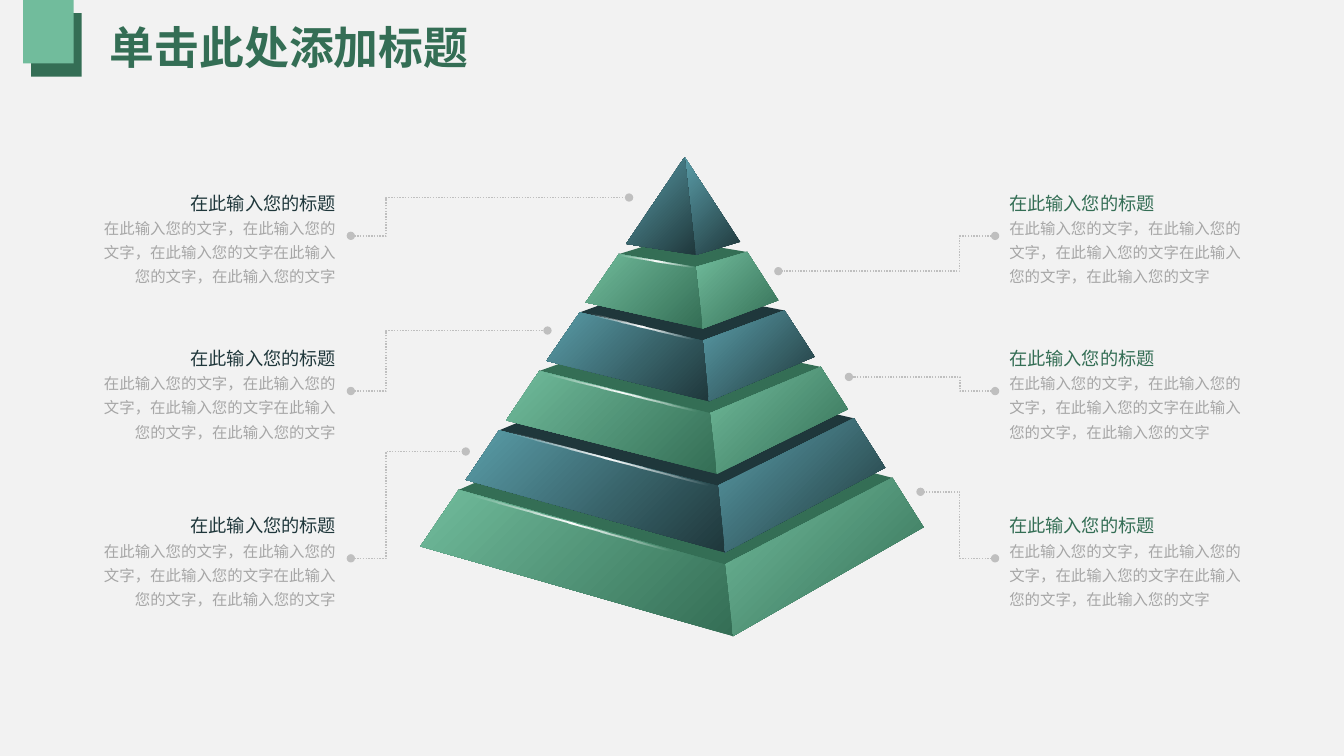
from lxml import etree
from pptx import Presentation
from pptx import util as u
from pptx.dml.color import RGBColor
from pptx.enum import dml, shapes, text
from pptx.oxml.ns import qn

FONT = "Noto Sans CJK SC"
GREEN, MINT, NAVY, TEAL = "346E55", "71BC9C", "1F373B", "5A9DA8"
HEADING = "在此输入您的标题"
BODY = "在此输入您的文字，在此输入您的文字，在此输入您的文字在此输入您的文字，在此输入您的文字"

# Corners: back, left top, left bottom, front bottom, right bottom, right top, front top
TIERS = [
    (GREEN, MINT, [(2.13, 2.53), (0.38, 3.3), (0, 3.86), (3.1, 4.75), (4.99, 3.67), (4.68, 3.18), (3.02, 4.04)],
     (0.47, 3.62, 2.06, 15.5)),
    (NAVY, TEAL, [(2.22, 2.11), (0.78, 2.71), (0.45, 3.2), (3.02, 3.92), (4.61, 3.08), (4.3, 2.59), (2.95, 3.26)],
     (0.83, 2.98, 2.06, 14.4)),
    (GREEN, MINT, [(2.27, 1.73), (1.18, 2.12), (0.85, 2.61), (2.94, 3.14), (4.24, 2.5), (3.97, 2.08), (2.87, 2.54)],
     (1.24, 2.32, 1.52, 13.7)),
    (NAVY, TEAL, [(2.32, 1.27), (1.58, 1.54), (1.25, 2.02), (2.86, 2.42), (3.91, 1.98), (3.61, 1.52), (2.8, 1.82)],
     (1.67, 1.67, 1.05, 12.8)),
    (GREEN, MINT, [(2.46, 0.81), (1.97, 0.96), (1.64, 1.44), (2.8, 1.7), (3.55, 1.42), (3.24, 0.94), (2.73, 1.09)],
     (1.98, 1.02, 0.73, 9)),
]
PEAK = [(2.62, 0), (2.04, 0.86), (2.73, 0.97), (3.17, 0.84)]

ROW_TOPS = [1.77, 3.31, 4.97]
LEFT_TARGETS = [(6.24, 1.96), (5.43, 3.28), (4.62, 4.48)]
RIGHT_TARGETS = [(7.72, 2.69), (8.42, 3.74), (9.13, 4.88)]


def rgb(hex_colour):
    """Turn a hex string into a colour."""
    return RGBColor.from_string(hex_colour)


def paint(part, *colours):
    """Fill with one colour, or with a diagonal gradient of two; no line or shadow."""
    part.shadow.inherit = False
    part.line.fill.background()
    if len(colours) == 1:
        part.fill.solid()
        part.fill.fore_color.rgb = rgb(colours[0])
        return
    part.fill.gradient()
    part.fill.gradient_angle = 135
    for stop, colour in zip(part.fill.gradient_stops, colours):
        stop.color.rgb = rgb(colour)


def style(paragraph, size, colour, spacing, bold=False):
    """Format a paragraph and its run."""
    paragraph.line_spacing = spacing
    font = paragraph.runs[0].font
    font.size, font.bold, font.name = u.Pt(size), bold, FONT
    font.color.rgb = rgb(colour)
    etree.SubElement(paragraph.runs[0].font._element, qn("a:ea")).set("typeface", FONT)


def add_header(slide, left, top):
    """Place the two overlapping blocks and the slide title."""
    for dx, dy, colour in [(0.08, 0.13, GREEN), (0, 0, MINT)]:
        block = slide.shapes.add_shape(shapes.MSO_SHAPE.RECTANGLE, u.Inches(left + dx),
                                       u.Inches(top + dy), u.Inches(0.5), u.Inches(0.63))
        paint(block, colour)
    title = slide.shapes.add_textbox(u.Inches(left + 0.76), u.Inches(top + 0.13),
                                     u.Inches(11.5), u.Inches(0.73))
    frame = title.text_frame
    frame.word_wrap = True
    frame.vertical_anchor = text.MSO_ANCHOR.MIDDLE
    frame.text = "单击此处添加标题"
    style(frame.paragraphs[0], 32, GREEN, 0.9, True)


def add_face(slide, left, top, corners, *colours):
    """Draw one flat face of the pyramid."""
    points = [(u.Inches(left + x), u.Inches(top + y)) for x, y in corners]
    builder = slide.shapes.build_freeform(*points[0])
    builder.add_line_segments(points[1:], close=True)
    paint(builder.convert_to_shape(), *colours)


def add_shine(slide, left, top, width, angle):
    """Draw a white glint that fades towards its ends."""
    shine = slide.shapes.add_shape(shapes.MSO_SHAPE.ROUNDED_RECTANGLE, u.Inches(left),
                                   u.Inches(top), u.Inches(width), u.Inches(0.02))
    shine.adjustments[0] = 0.5
    shine.rotation = angle
    paint(shine, "FFFFFF", "FFFFFF")
    gradient = shine._element.spPr.find(qn("a:gradFill"))
    outer_colour = gradient.findall(".//" + qn("a:srgbClr"))[1]
    etree.SubElement(outer_colour, qn("a:alpha")).set("val", "0")
    circle = etree.Element(qn("a:path"), {"path": "circle"})
    etree.SubElement(circle, qn("a:fillToRect"), {side: "50000" for side in "ltrb"})
    gradient.replace(gradient.find(qn("a:lin")), circle)


def add_pyramid(slide, left, top):
    """Stack the tiers from the base up and finish with the peak."""
    for dark, light, corners, (x, y, width, angle) in TIERS:
        _, left_top, left_bottom, front_bottom, right_bottom, right_top, front_top = corners
        add_face(slide, left, top, corners[:6], dark)
        add_face(slide, left, top, [right_top, front_top, front_bottom, right_bottom], dark, light)
        add_face(slide, left, top, [front_top, left_top, left_bottom, front_bottom], dark, light)
        add_shine(slide, left + x, top + y, width, angle)
    apex, left_corner, front_corner, right_corner = PEAK
    add_face(slide, left, top, [apex, front_corner, right_corner], NAVY, TEAL)
    add_face(slide, left, top, [apex, left_corner, front_corner], NAVY, TEAL)


def add_leader(slide, start, end, bend):
    """Draw a dotted elbow line whose bend lies a given way from its start."""
    leader = slide.shapes.add_connector(shapes.MSO_CONNECTOR.ELBOW,
                                        *(u.Inches(value) for value in (*start, *end)))
    leader.line.color.rgb = rgb("BFBFBF")
    leader.line.width = u.Pt(1)
    leader.line.dash_style = dml.MSO_LINE.ROUND_DOT
    outline = leader.line._get_or_add_ln()
    for tip in ("a:headEnd", "a:tailEnd"):
        etree.SubElement(outline, qn(tip)).set("type", "oval")
    properties = leader._element.spPr
    etree.SubElement(properties, qn("a:effectLst"))
    guides = properties.find(qn("a:prstGeom")).find(qn("a:avLst"))
    share = round(bend / abs(end[0] - start[0]) * 100000)
    etree.SubElement(guides, qn("a:gd"), {"name": "adj1", "fmla": f"val {share}"})


def add_callout(slide, left, top, target, on_left):
    """Place a heading with its text and lead a line from it to the pyramid."""
    width, height = 2.62, 1.14
    note = slide.shapes.add_textbox(u.Inches(left), u.Inches(top), u.Inches(width), u.Inches(height))
    frame = note.text_frame
    frame.word_wrap = True
    frame.auto_size = text.MSO_AUTO_SIZE.SHAPE_TO_FIT_TEXT
    frame.margin_left = frame.margin_right = u.Inches(0.13)
    frame.margin_top = frame.margin_bottom = u.Inches(0.07)
    frame.text = HEADING
    frame.add_paragraph().text = BODY
    heading, body = frame.paragraphs
    style(heading, 13, NAVY if on_left else GREEN, 1.3)
    style(body, 11, "A6A6A6", 1.3)
    for paragraph in frame.paragraphs:
        paragraph.alignment = text.PP_ALIGN.RIGHT if on_left else text.PP_ALIGN.LEFT
    start_x = left + width + 0.02 if on_left else left - 0.01
    add_leader(slide, (start_x, top + height / 2), target, 0.35)


def main():
    """Build the slide and save it."""
    deck = Presentation()
    deck.slide_width, deck.slide_height = u.Inches(13.33), u.Inches(7.5)
    slide = deck.slides.add_slide(deck.slide_layouts[6])
    slide.background.fill.solid()
    slide.background.fill.fore_color.rgb = rgb("F2F2F2")
    add_header(slide, 0.23, 0)
    for top, left_target, right_target in zip(ROW_TOPS, LEFT_TARGETS, RIGHT_TARGETS):
        add_callout(slide, 0.84, top, left_target, True)
        add_callout(slide, 9.88, top, right_target, False)
    add_pyramid(slide, 4.17, 1.56)
    deck.save("out.pptx")


if __name__ == "__main__":
    main()
